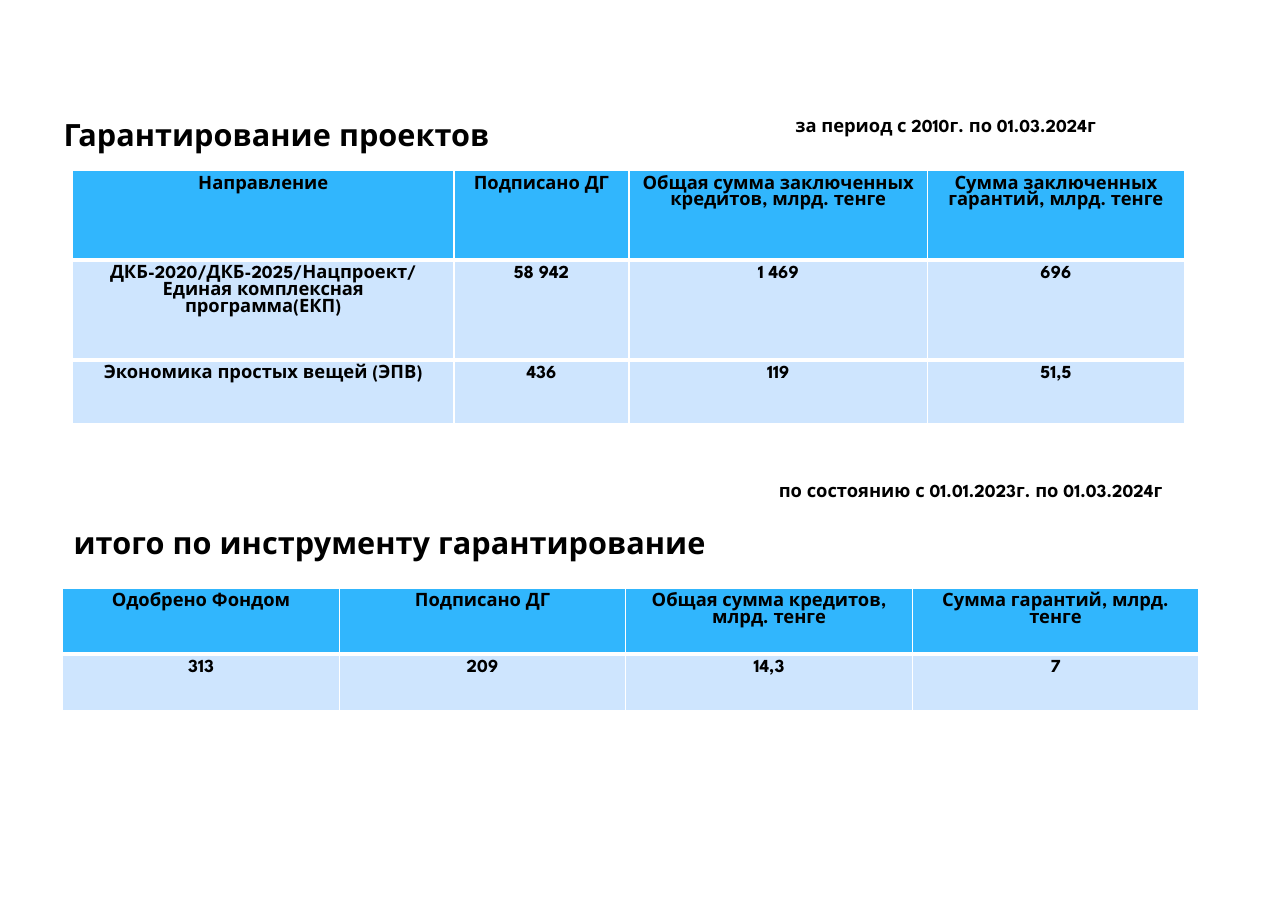
from lxml import etree
from pptx import Presentation
from pptx import util as u
from pptx.dml.color import RGBColor
from pptx.enum import text
from pptx.oxml import ns

PX = 9144
FACE = "League Spartan"
HUES = {"ink": "000000", "head": "31B6FD", "body": "CEE5FE", "rule": "FFFFFF"}
TITLE = {"size": u.Pt(20), "bold": True, "name": FACE}
PLAIN = {"size": u.Pt(12), "bold": True, "name": FACE}
FRAME = {"word_wrap": True, "auto_size": text.MSO_AUTO_SIZE.SHAPE_TO_FIT_TEXT}

DEALS = [
    ["Направление", "Подписано ДГ", "Общая сумма заключенных кредитов, млрд. тенге",
     "Сумма заключенных гарантий, млрд. тенге"],
    ["ДКБ-2020/ДКБ-2025/Нацпроект/ Единая комплексная программа(ЕКП)",
     "58 942", "1 469", "696"],
    ["Экономика простых вещей (ЭПВ)", "436", "119", "51,5"],
]
TOTALS = [
    ["Одобрено Фондом", "Подписано ДГ", "Общая сумма кредитов, млрд. тенге",
     "Сумма гарантий, млрд. тенге"],
    ["313", "209", "14,3", "7"],
]


def scale(*sizes):
    return [u.Emu(size * PX) for size in sizes]


def apply(item, values):
    for key, value in values.items():
        setattr(item, key, value)


def write(para, words, style):
    run = para.add_run()
    run.text = words
    apply(run.font, style)
    run.font.color.rgb = RGBColor.from_string(HUES["ink"])


def label(slide, box, words, style):
    frame = slide.shapes.add_textbox(*scale(*box)).text_frame
    apply(frame, FRAME)
    write(frame.paragraphs[0], words, style)


def border(cell, widths):
    props = cell._tc.get_or_add_tcPr()
    for spot, (side, width) in enumerate(widths.items()):
        line = etree.Element(ns.qn("a:ln" + side), w=str(u.Pt(width)))
        fill = etree.SubElement(line, ns.qn("a:solidFill"))
        etree.SubElement(fill, ns.qn("a:srgbClr"), val=HUES["rule"])
        props.insert(spot, line)


def grid(slide, left, top, cols, rows, data, foot):
    box = scale(left, top, sum(cols), sum(rows))
    table = slide.shapes.add_table(len(rows), len(cols), *box).table
    for col, width in zip(table.columns, scale(*cols)):
        col.width = width
    for row, height in zip(table.rows, scale(*rows)):
        row.height = height
    last = len(rows) - 1
    for r, line in enumerate(data):
        for c, words in enumerate(line):
            cell = table.cell(r, c)
            cell.fill.solid()
            hue = HUES["body" if r else "head"]
            cell.fill.fore_color.rgb = RGBColor.from_string(hue)
            border(cell, {"L": 1, "R": 1, "T": 3 if r else 1,
                          "B": foot if r == last else 3})
            para = cell.text_frame.paragraphs[0]
            para.alignment = text.PP_ALIGN.CENTER
            write(para, words, PLAIN)


def main():
    deck = Presentation()
    deck.slide_width, deck.slide_height = scale(1169, 827)
    slide = deck.slides.add_slide(deck.slide_layouts[6])
    label(slide, (712, 99, 363, 30), "за период с 2010г. по 01.03.2024г", PLAIN)
    label(slide, (48, 100, 724, 44), "Гарантирование проектов", TITLE)
    grid(slide, 66, 155, [346, 159, 271, 233], [81, 91, 59], DEALS, 3)
    label(slide, (57, 471, 702, 44), "итого по инструменту гарантирование", TITLE)
    grid(slide, 57, 534, [251, 260, 260, 260], [60, 51], TOTALS, 1)
    label(slide, (697, 430, 394, 30),
          "по состоянию с 01.01.2023г. по 01.03.2024г", PLAIN)
    deck.save("out.pptx")


if __name__ == "__main__":
    main()
